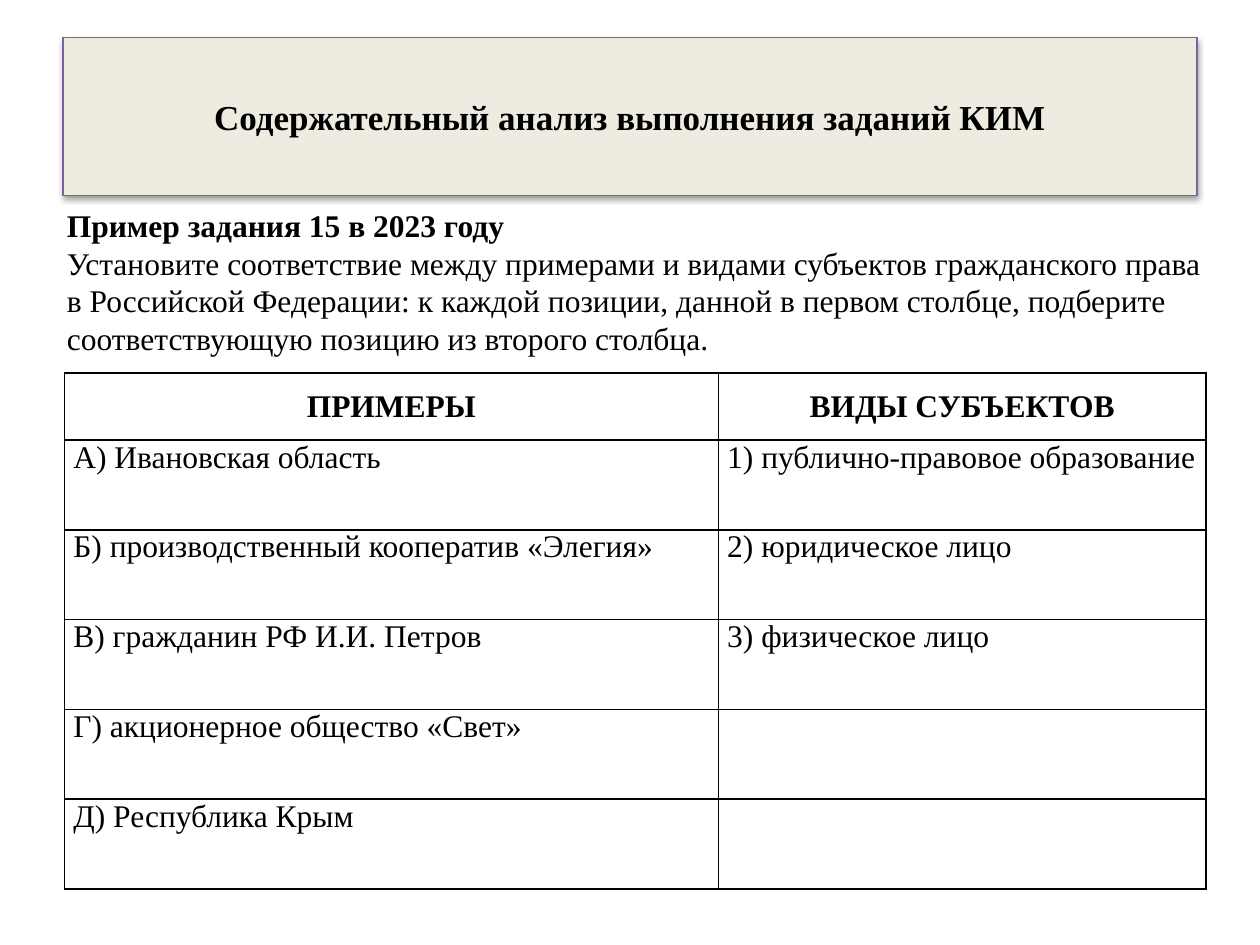
from lxml import etree
from pptx import Presentation
from pptx.dml.color import RGBColor
from pptx.enum import text as t
from pptx.oxml import ns
from pptx.util import Cm, Pt


def paint(hue):
    return RGBColor.from_string(hue)


def style(para, size, bold, align):
    para.alignment = align
    for run in para.runs:
        font = run.font
        font.name = "Times New Roman"
        font.size = Pt(size)
        font.bold = bold
        font.color.rgb = paint("000000")


left, mid, just = t.PP_ALIGN.LEFT, t.PP_ALIGN.CENTER, t.PP_ALIGN.JUSTIFY
main = 'xmlns:a="http://schemas.openxmlformats.org/drawingml/2006/main"'

deck = Presentation()
deck.slide_width, deck.slide_height = Cm(25.4), Cm(19.05)
slide = deck.slides.add_slide(deck.slide_layouts[5])

title = slide.shapes.title
title.left, title.top = Cm(1.27), Cm(0.76)
title.width, title.height = Cm(22.86), Cm(3.18)
title.fill.solid()
title.fill.fore_color.rgb = paint("EEECE1")
title.line.color.rgb = paint("7D60A0")
title.line.width = Pt(0.75)
title._element.spPr.append(etree.fromstring(
    f'<a:effectLst {main}><a:outerShdw blurRad="39370" dist="20320" dir="5400000" rotWithShape="0">'
    '<a:srgbClr val="000000"><a:alpha val="38000"/></a:srgbClr></a:outerShdw></a:effectLst>'))
title.text_frame.text = "Содержательный анализ выполнения заданий КИМ"
title.text_frame.vertical_anchor = t.MSO_ANCHOR.MIDDLE
style(title.text_frame.paragraphs[0], 20, True, mid)

box = slide.shapes.add_textbox(Cm(1.1), Cm(4.01), Cm(23.6), Cm(3.33))
frame = box.text_frame
frame.word_wrap = True
frame.auto_size = t.MSO_AUTO_SIZE.SHAPE_TO_FIT_TEXT
frame.vertical_anchor = t.MSO_ANCHOR.MIDDLE
frame.text = "Пример задания 15 в 2023 году"
task = frame.add_paragraph()
task.text = (
    "Установите соответствие между примерами и видами субъектов гражданского права "
    "в Российской Федерации: к каждой позиции, данной в первом столбце, подберите "
    "соответствующую позицию из второго столбца.")
style(frame.paragraphs[0], 18, True, just)
style(task, 18, False, left)

rows = [
    ("ПРИМЕРЫ", "ВИДЫ СУБЪЕКТОВ"),
    ("А) Ивановская область", "1) публично-правовое образование"),
    ("Б) производственный кооператив «Элегия»", "2) юридическое лицо"),
    ("В) гражданин РФ И.И. Петров", "3) физическое лицо"),
    ("Г) акционерное общество «Свет»", ""),
    ("Д) Республика Крым", ""),
]
grid = slide.shapes.add_table(len(rows), 2, Cm(1.3), Cm(7.52), Cm(23.01), Cm(10.4)).table
grid.columns[0].width, grid.columns[1].width = Cm(13.18), Cm(9.83)
for i, row in enumerate(rows):
    head = i == 0
    grid.rows[i].height = Cm(1.35 if head else 1.81)
    for j, words in enumerate(row):
        cell = grid.cell(i, j)
        cell.text = words
        cell.margin_left = cell.margin_right = Cm(0.18)
        cell.margin_top = cell.margin_bottom = 0
        cell.vertical_anchor = t.MSO_ANCHOR.MIDDLE if head else t.MSO_ANCHOR.TOP
        style(cell.text_frame.paragraphs[0], 18, head, mid if head else left)
        props = cell._tc.get_or_add_tcPr()
        for side in ("lnL", "lnR", "lnT", "lnB"):
            edge = etree.SubElement(props, ns.qn(f"a:{side}"), w=str(Pt(1)))
            fill = etree.SubElement(edge, ns.qn("a:solidFill"))
            etree.SubElement(fill, ns.qn("a:srgbClr"), val="000000")
        cell.fill.background()

deck.save("out.pptx")
